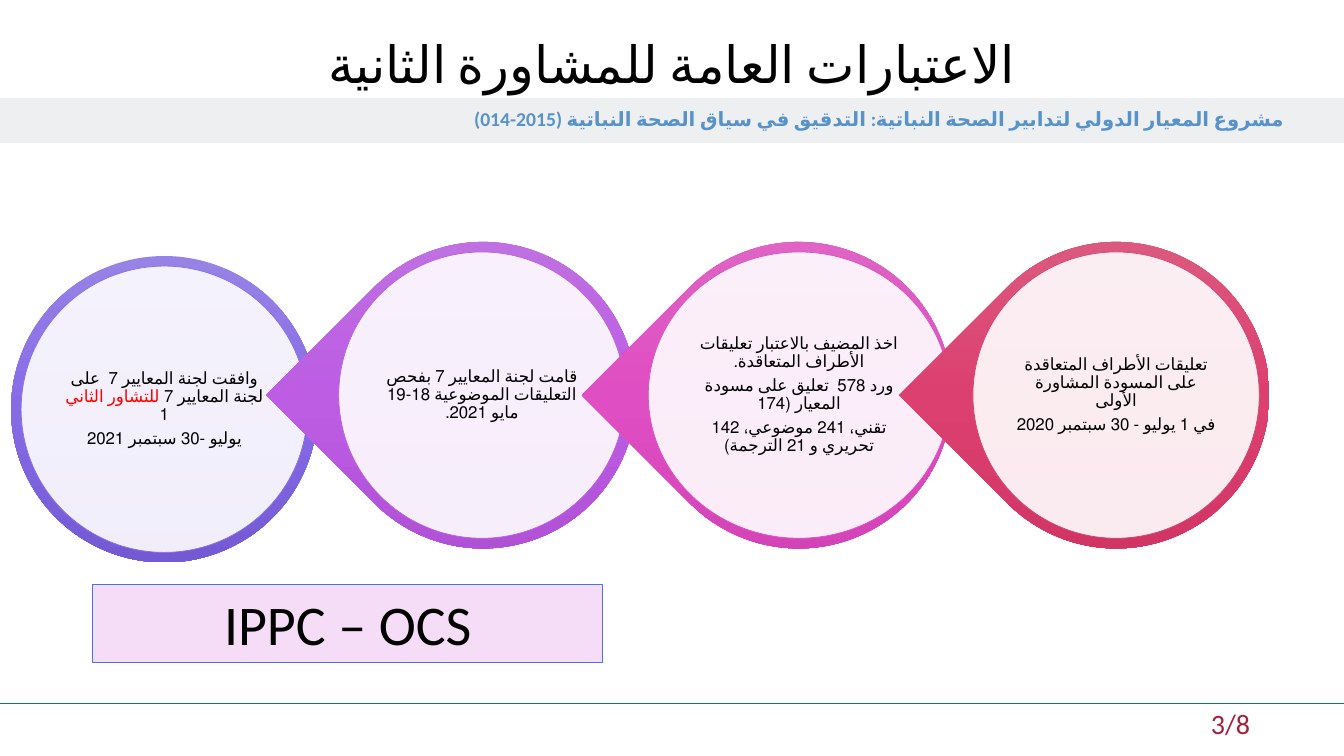
from dataclasses import dataclass

from lxml.etree import SubElement
from pptx import Presentation
from pptx.dml.color import RGBColor
from pptx.enum.lang import MSO_LANGUAGE_ID as Language
from pptx.enum.shapes import MSO_CONNECTOR as Connector, MSO_SHAPE as Shape
from pptx.enum.text import MSO_ANCHOR as Anchor, PP_ALIGN as Align
from pptx.oxml.ns import qn
from pptx.util import Inches, Pt


@dataclass(frozen=True)
class Theme:
    font: str = "Calibri"
    black: str = "000000"
    white: str = "FFFFFF"
    red: str = "FF0000"
    rule: str = "00825F"
    band: str = "D8D9DC"
    subtitle: str = "5792C9"
    number: str = "A81E3B"
    label_fill: str = "F4D5F5"
    label_line: str = "4775E7"
    title_size: float = 36.7
    subtitle_size: float = 14
    number_size: float = 20
    body_size: float = 12
    label_size: float = 40


THEME = Theme()
RING = 3.04
FACE_HEIGHT = 2.84
FACE_GAP = 0.1
TEXT_INSET = 0.143

STAGES = [
    dict(shape=Shape.OVAL, left=0.11, top=2.54, face_left=0.21, face_width=2.84,
         shades=("9783E6", "866BE7", "7359D4"), edge="8971E1", rtl=True,
         paragraphs=[[("وافقت لجنة المعايير 7  على لجنة المعايير 7 ", THEME.black),
                      ("للتشاور الثاني ", THEME.red), ("1", THEME.black)],
                     "يوليو -30 سبتمبر 2021"]),
    dict(shape=Shape.TEAR, left=3.27, top=2.4, face_left=3.36, face_width=2.84,
         shades=("C178E2", "BC5DE3", "AA4BD1"), edge="B963DD", rtl=True,
         paragraphs=["قامت لجنة المعايير 7 بفحص التعليقات الموضوعية 18-19 مايو 2021."]),
    dict(shape=Shape.TEAR, left=6.4, top=2.4, face_left=6.43, face_width=2.99,
         shades=("DE6DC6", "E04EC3", "CE3EB2"), edge="D955BF", rtl=True,
         paragraphs=["اخذ المضيف بالاعتبار تعليقات الأطراف المتعاقدة.",
                     "ورد 578  تعليق على مسودة المعيار (174",
                     "تقني، 241 موضوعي، 142 تحريري و 21 الترجمة)"]),
    dict(shape=Shape.TEAR, left=9.55, top=2.4, face_left=9.65, face_width=2.84,
         shades=("DB6384", "DC4070", "CC3161"), edge="D54773", rtl=False,
         paragraphs=["تعليقات الأطراف المتعاقدة على المسودة المشاورة الأولى",
                     "في 1 يوليو - 30 سبتمبر 2020"]),
]


def write_text(shape, paragraphs, size, color=THEME.black, bold=False, align=Align.CENTER,
               anchor=Anchor.TOP, margins=(0.1, 0.05, 0.1, 0.05), spacing=None,
               after=None, rtl=False, language=Language.ARABIC, complex_font=None):
    frame = shape.text_frame
    frame.word_wrap = True
    frame.vertical_anchor = anchor
    (frame.margin_left, frame.margin_top,
     frame.margin_right, frame.margin_bottom) = map(Inches, margins)
    for index, content in enumerate(paragraphs):
        para = frame.add_paragraph() if index else frame.paragraphs[0]
        para.alignment = align
        if spacing:
            para.line_spacing = spacing
        if after:
            para.space_after = Pt(after)
        if rtl:
            para._p.get_or_add_pPr().set("rtl", "1")
        pieces = [(content, color)] if isinstance(content, str) else content
        for text, tint in pieces:
            span = para.add_run()
            span.text = text
            span.font.name = THEME.font
            span.font.size = Pt(size)
            span.font.bold = bold
            span.font.language_id = language
            span.font.color.rgb = RGBColor.from_string(tint)
            if complex_font:
                SubElement(span._r.get_or_add_rPr(), qn("a:cs"), typeface=complex_font)


class SlideBuilder:
    def __init__(self, slide, theme):
        self.slide = slide
        self.theme = theme

    def title(self, text, bounds):
        box = self.slide.shapes.title
        box.left, box.top, box.width, box.height = map(Inches, bounds)
        box.element.getparent().append(box.element)
        write_text(box, [text], self.theme.title_size, anchor=Anchor.MIDDLE,
                   complex_font=self.theme.font)

    def text(self, paragraphs, bounds, size, **style):
        box = self.slide.shapes.add_textbox(*map(Inches, bounds))
        write_text(box, paragraphs, size, **style)

    def shape(self, kind, bounds, color=None, opacity=None, edge=None):
        shape = self.slide.shapes.add_shape(kind, *map(Inches, bounds))
        shape.shadow.inherit = False
        if color:
            shape.fill.solid()
            shape.fill.fore_color.rgb = RGBColor.from_string(color)
        if opacity:
            tint = shape.element.spPr.find(qn("a:solidFill")).find(qn("a:srgbClr"))
            SubElement(tint, qn("a:alpha"), val=str(opacity * 1000))
        if edge:
            shape.line.color.rgb = RGBColor.from_string(edge)
            shape.line.width = Pt(0.5)
        else:
            shape.line.fill.background()
        return shape

    def ring(self, kind, bounds, shades):
        ring = self.shape(kind, bounds)
        if kind == Shape.TEAR:
            ring.rotation = 225
        ring.fill.gradient()
        gradient = ring.element.spPr.find(qn("a:gradFill"))
        gradient.set("rotWithShape", "0")
        for child in list(gradient):
            gradient.remove(child)
        stops = SubElement(gradient, qn("a:gsLst"))
        for index, shade in enumerate(shades):
            stop = SubElement(stops, qn("a:gs"), pos=str(index * 50000))
            SubElement(stop, qn("a:srgbClr"), val=shade)
        SubElement(gradient, qn("a:lin"), ang="5400000", scaled="0")

    def stage(self, shape, left, top, face_left, face_width, shades, edge, rtl, paragraphs):
        self.ring(shape, (left, top, RING, RING), shades)
        face_top = top + FACE_GAP
        self.shape(Shape.OVAL, (face_left, face_top, face_width, FACE_HEIGHT),
                   self.theme.white, 90, edge)
        share = 1 - 2 * TEXT_INSET
        bounds = (face_left + TEXT_INSET * face_width, face_top + TEXT_INSET * FACE_HEIGHT,
                  share * face_width, share * FACE_HEIGHT)
        self.text(paragraphs, bounds, self.theme.body_size, anchor=Anchor.MIDDLE,
                  margins=(0.02,) * 4, spacing=0.9, after=4.2, rtl=rtl)

    def rule(self, left, right, top):
        line = self.slide.shapes.add_connector(
            Connector.STRAIGHT, Inches(left), Inches(top), Inches(right), Inches(top))
        line.line.color.rgb = RGBColor.from_string(self.theme.rule)
        line.line.width = Pt(1)
        SubElement(line.element.spPr, qn("a:effectLst"))


def main():
    deck = Presentation()
    deck.slide_width, deck.slide_height = Inches(13.33), Inches(7.5)
    page = SlideBuilder(deck.slides.add_slide(deck.slide_layouts[5]), THEME)

    page.rule(0, 13.33, 6.98)
    band = page.shape(Shape.RECTANGLE, (0, 0.97, 13.33, 0.45), THEME.band, 42)
    write_text(band,
               ["مشروع المعيار الدولي لتدابير الصحة النباتية: التدقيق في سياق الصحة النباتية (2015-014)"],
               THEME.subtitle_size, color=THEME.subtitle, bold=True, align=Align.RIGHT,
               anchor=Anchor.MIDDLE, margins=(0.59, 0.05, 0.59, 0.05), spacing=0.9,
               complex_font=THEME.font)
    page.text(["3/8"], (11.42, 7.01, 1.92, 0.39), THEME.number_size, color=THEME.number,
              align=Align.LEFT, margins=(0.59, 0, 0.39, 0.05), language=Language.ENGLISH_US)
    page.title("الاعتبارات العامة للمشاورة الثانية", (0, 0, 13.33, 1.25))

    for stage in STAGES:
        page.stage(**stage)

    label = page.shape(Shape.RECTANGLE, (0.92, 5.8, 5.06, 0.77),
                       THEME.label_fill, 80, THEME.label_line)
    write_text(label, ["IPPC – OCS"], THEME.label_size, language=Language.ENGLISH_US)
    deck.save("out.pptx")


if __name__ == "__main__":
    main()
